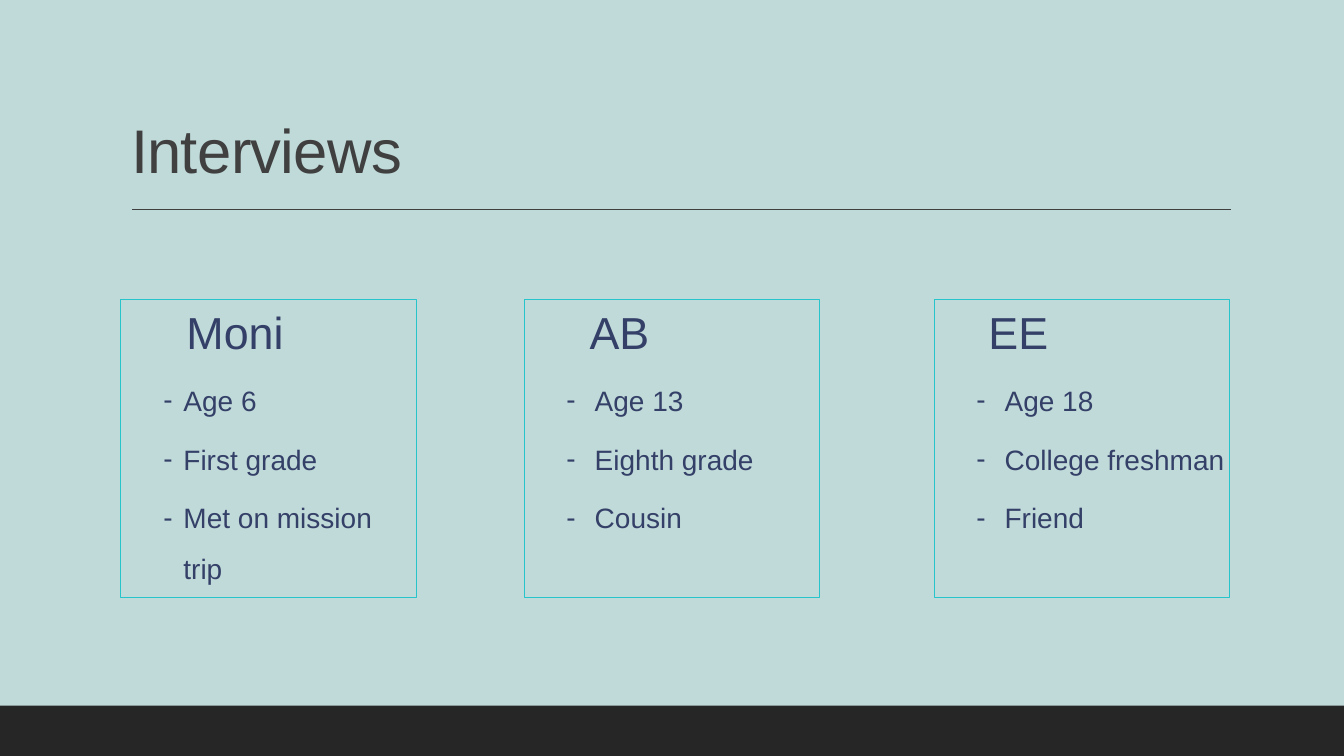
from dataclasses import dataclass

import pptx
import pptx.dml.color
import pptx.enum.shapes
import pptx.enum.text
import pptx.oxml
import pptx.oxml.ns
import pptx.util
from lxml import etree

SLIDE_WIDTH = pptx.util.Inches(13.333)
SLIDE_HEIGHT = pptx.util.Inches(7.5)


@dataclass(frozen=True)
class Theme:
    font: str = "Arial"
    background: str = "C0DAD9"
    footer: str = "262626"
    heading: str = "404040"
    body: str = "344068"
    border: str = "28C4CC"
    title_size: int = 44
    name_size: int = 32
    fact_size: int = 20


THEME = Theme()

CARD_TOP, CARD_WIDTH, CARD_HEIGHT = 39.6, 22, 39.47
BULLET_START = 0.42

# left edge in % of the width, name, name indent, fact indent (inches), facts
INTERVIEWS = [
    (9, "Moni", 0.65, 0.62, ["Age 6", "First grade", "Met on mission trip"]),
    (39, "AB", 0.65, 0.7, ["Age 13", "Eighth grade", "Cousin"]),
    (69.5, "EE", 0.54, 0.7, ["Age 18", "College freshman", "Friend"]),
]


def across(percent):
    return int(SLIDE_WIDTH * percent / 100)


def down(percent):
    return int(SLIDE_HEIGHT * percent / 100)


def rgb(code):
    return pptx.dml.color.RGBColor.from_string(code)


def add_run(paragraph, text, size, color):
    run = paragraph.add_run()
    run.text = text
    run.font.name = THEME.font
    run.font.size = pptx.util.Pt(size)
    run.font.color.rgb = rgb(color)
    return run


def add_rectangle(slide, left, top, width, height):
    rectangle = slide.shapes.add_shape(
        pptx.enum.shapes.MSO_SHAPE.RECTANGLE,
        across(left), down(top), across(width), down(height))
    rectangle.shadow.inherit = False
    return rectangle


def add_footer_band(slide):
    band = add_rectangle(slide, 0, 93.33, 100, 6.67)
    band.fill.solid()
    band.fill.fore_color.rgb = rgb(THEME.footer)
    band.line.fill.background()


def add_title_rule(slide):
    rule = slide.shapes.add_connector(
        pptx.enum.shapes.MSO_CONNECTOR.STRAIGHT,
        across(9.83), down(27.73), across(91.58), down(27.73))
    rule.line.color.rgb = rgb(THEME.heading)
    rule.line.width = pptx.util.Pt(1)
    etree.SubElement(rule._element.spPr, pptx.oxml.ns.qn("a:effectLst"))


def set_title(slide, text):
    title = slide.shapes.title
    title.left, title.top = across(9), down(4.13)
    title.width, title.height = across(82.5), down(21.2)
    frame = title.text_frame
    frame.auto_size = pptx.enum.text.MSO_AUTO_SIZE.NONE
    frame.vertical_anchor = pptx.enum.text.MSO_ANCHOR.BOTTOM
    paragraph = frame.paragraphs[0]
    paragraph.alignment = pptx.enum.text.PP_ALIGN.LEFT
    paragraph.line_spacing = 0.9
    run = add_run(paragraph, text, THEME.title_size, THEME.heading)
    run.font._element.set("spc", "-50")


def format_paragraph(paragraph, indent, first_line=0, bullet=None):
    """Set spacing and indents (inches), with an optional bullet character."""
    paragraph.alignment = pptx.enum.text.PP_ALIGN.LEFT
    paragraph.space_before = pptx.util.Pt(2)
    paragraph.space_after = pptx.util.Pt(4)
    properties = paragraph._p.get_or_add_pPr()
    properties.set("marL", str(int(pptx.util.Inches(indent))))
    properties.set("indent", str(int(pptx.util.Inches(first_line))))
    if bullet:
        paragraph.line_spacing = 1.5
        font = etree.SubElement(properties, pptx.oxml.ns.qn("a:buFont"))
        font.set("typeface", THEME.font)
        mark = etree.SubElement(properties, pptx.oxml.ns.qn("a:buChar"))
        mark.set("char", bullet)


def add_interview_card(slide, left, name, name_indent, fact_indent, facts):
    card = add_rectangle(slide, left, CARD_TOP, CARD_WIDTH, CARD_HEIGHT)
    card.fill.background()
    card.line.color.rgb = rgb(THEME.border)
    card.line.width = pptx.util.Pt(0.75)
    frame = card.text_frame
    frame.word_wrap = True
    frame.vertical_anchor = pptx.enum.text.MSO_ANCHOR.TOP
    frame.margin_left = frame.margin_right = 0
    frame.margin_top = frame.margin_bottom = pptx.util.Inches(0.05)

    heading = frame.paragraphs[0]
    format_paragraph(heading, name_indent)
    add_run(heading, name, THEME.name_size, THEME.body)
    for fact in facts:
        item = frame.add_paragraph()
        item.level = 1
        format_paragraph(item, fact_indent, BULLET_START - fact_indent, "-")
        add_run(item, fact, THEME.fact_size, THEME.body)


def main():
    presentation = pptx.Presentation()
    presentation.slide_width = SLIDE_WIDTH
    presentation.slide_height = SLIDE_HEIGHT
    title_only = presentation.slide_layouts[5]
    slide = presentation.slides.add_slide(title_only)
    slide.background.fill.solid()
    slide.background.fill.fore_color.rgb = rgb(THEME.background)

    add_footer_band(slide)
    add_title_rule(slide)
    set_title(slide, "Interviews")
    for interview in INTERVIEWS:
        add_interview_card(slide, *interview)
    presentation.save("out.pptx")


if __name__ == "__main__":
    main()
